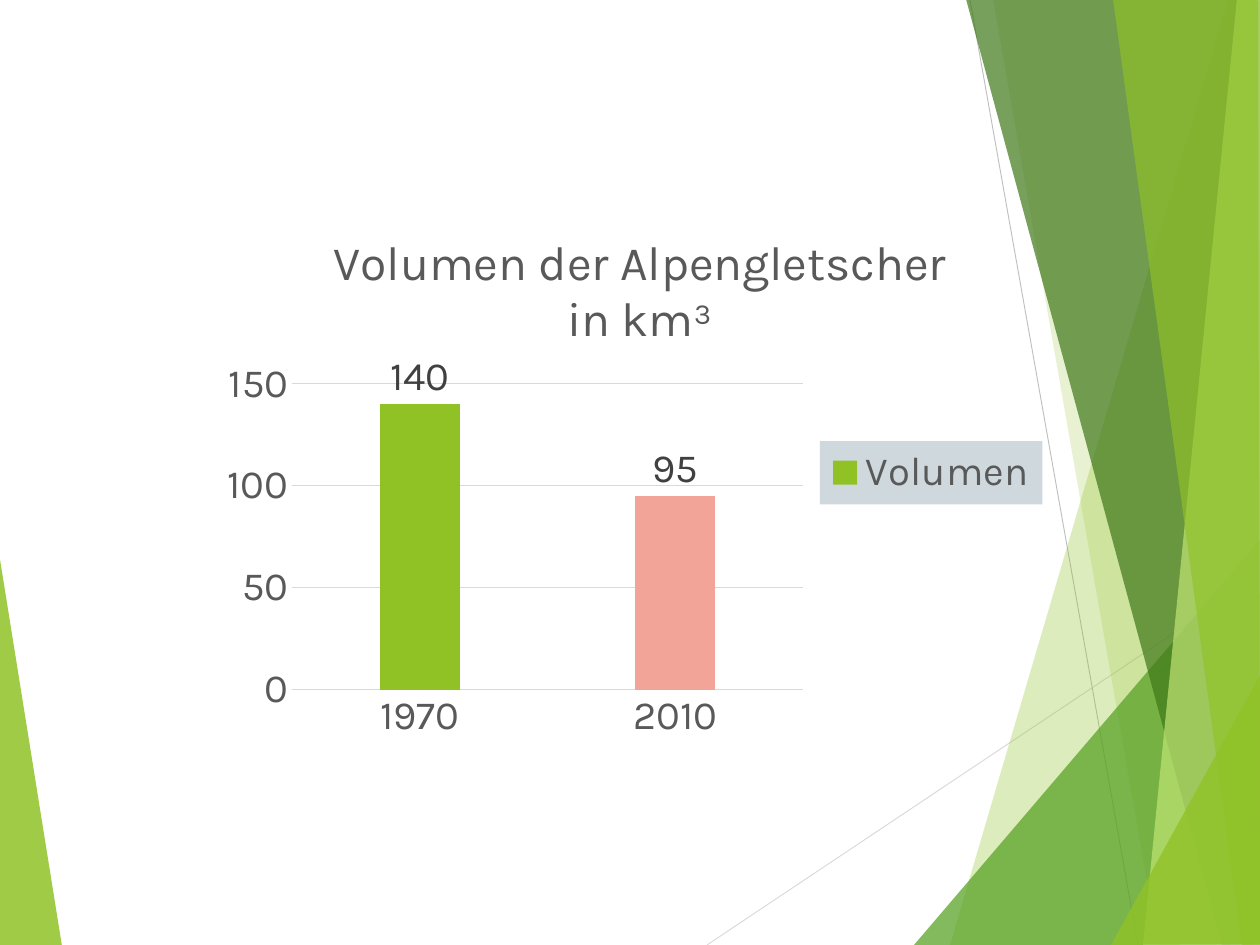
from dataclasses import dataclass

from lxml import etree
from pptx import Presentation
from pptx.chart.data import CategoryChartData
from pptx.dml.color import RGBColor
from pptx.enum.chart import XL_CHART_TYPE, XL_LABEL_POSITION, XL_LEGEND_POSITION, XL_TICK_MARK
from pptx.enum.shapes import MSO_CONNECTOR
from pptx.oxml import parse_xml
from pptx.oxml.ns import nsdecls, qn
from pptx.util import Pt

COLUMNS = XL_CHART_TYPE.COLUMN_CLUSTERED
OUTSIDE_END = XL_LABEL_POSITION.OUTSIDE_END
RIGHT = XL_LEGEND_POSITION.RIGHT
NO_TICK = XL_TICK_MARK.NONE
STRAIGHT = MSO_CONNECTOR.STRAIGHT
PX = 10160


@dataclass(frozen=True)
class Theme:
    font: str = "Karla"
    lime: str = "90C226"
    green: str = "54A021"
    forest: str = "3F7819"
    pale_lime: str = "C0E474"
    salmon: str = "F2A499"
    legend_fill: str = "CFD9DD"
    text: str = "595959"
    label: str = "404040"
    grid: str = "D9D9D9"
    long_ray: str = "BFBFBF"
    title_size: float = 38.4
    body_size: int = 32
    hairline: float = 0.75


THEME = Theme()
SLIDE = (1260, 945)

TITLE = "Volumen der Alpengletscher in km³"
YEARS = ["1970", "2010"]
SERIES = "Volumen"
VOLUMES = [140, 95]
CHART = (210, 193, 840, 560)
PLOT = (292, 384, 511, 306)
LEGEND = (820, 441, 223, 63)
TITLE_CORNER = (325, 222)

LEFT_FACET = [(THEME.lime, 85, [(-1, 553), (62, 946), (-1, 945)])]
RAYS = [
    (THEME.grid, (707, 945), (1261, 575)),
    (THEME.long_ray, (970, 0), (1138, 945)),
]
RIGHT_FACETS = [
    (THEME.lime, 30, [(1228, 0), (950, 945), (1262, 946), (1261, 1)]),
    (THEME.lime, 20, [(993, -1), (1158, 945), (1261, 945), (1261, -1)]),
    (THEME.green, 72, [(914, 945), (1260, 540), (1261, 945)]),
    (THEME.forest, 70, [(966, -1), (1222, 945), (1261, 944), (1261, -1)]),
    (THEME.pale_lime, 70, [(1237, -1), (1143, 945), (1261, 945), (1261, -1)]),
    (THEME.lime, 65, [(1113, -1), (1242, 945), (1260, 945), (1258, -1)]),
    (THEME.lime, 80, [(1111, 945), (1261, 674), (1262, 944)]),
]


def rgb(value):
    return RGBColor.from_string(value)


def style_font(font, size=THEME.body_size, color=THEME.text):
    font.name = THEME.font
    font.size = Pt(size)
    font.bold = False
    font.color.rgb = rgb(color)


def write_text(frame, text, **style):
    run = frame.paragraphs[0].add_run()
    run.text = text
    style_font(run.font, **style)


def style_line(line, color):
    line.color.rgb = rgb(color)
    line.width = Pt(THEME.hairline)


def add_facets(slide, facets):
    for color, opacity, points in facets:
        builder = slide.shapes.build_freeform(*points[0], scale=PX)
        builder.add_line_segments(points[1:], close=True)
        facet = builder.convert_to_shape()
        facet.shadow.inherit = False
        facet.line.fill.background()
        facet.fill.solid()
        facet.fill.fore_color.rgb = rgb(color)
        tint = facet.fill._xPr.find(qn("a:solidFill"))[0]
        etree.SubElement(tint, qn("a:alpha")).set("val", str(opacity * 1000))


def add_rays(slide):
    for color, start, end in RAYS:
        ray = slide.shapes.add_connector(STRAIGHT, *(v * PX for v in start + end))
        style_line(ray.line, color)
        etree.SubElement(ray._element.spPr, qn("a:effectLst"))


def place(element, box, inner=False):
    left, top, width, height = CHART
    shares = [(box[0] - left) / width, (box[1] - top) / height]
    shares += [v / whole for v, whole in zip(box[2:], (width, height))]
    marks = '<c:layoutTarget val="inner"/>' if inner else ""
    marks += '<c:xMode val="edge"/><c:yMode val="edge"/>'
    marks += "".join(f'<c:{k} val="{v:.3f}"/>' for k, v in zip("xywh", shares))
    for old in element.findall(qn("c:layout")):
        element.remove(old)
    layout = parse_xml(
        f'<c:layout {nsdecls("c")}><c:manualLayout>{marks}</c:manualLayout></c:layout>'
    )
    before = [child for child in element if child.tag in (qn("c:tx"), qn("c:legendPos"))]
    element.insert(len(before), layout)


def add_glacier_chart(slide):
    data = CategoryChartData()
    data.categories = YEARS
    data.add_series(SERIES, VOLUMES)
    chart = slide.shapes.add_chart(COLUMNS, *(v * PX for v in CHART), data).chart
    style_font(chart.font)

    chart.has_title = True
    write_text(chart.chart_title.text_frame, TITLE, size=THEME.title_size)
    chart.chart_title.include_in_layout = False
    place(chart.chart_title._element, TITLE_CORNER)

    plot = chart.plots[0]
    plot.vary_by_categories = False
    plot.gap_width = 219
    plot.overlap = -27
    place(chart._chartSpace.chart.plotArea, PLOT, inner=True)

    volume = plot.series[0]
    volume.invert_if_negative = False
    for fill, color in (
        (volume.format.fill, THEME.lime),
        (volume.points[1].format.fill, THEME.salmon),
    ):
        fill.solid()
        fill.fore_color.rgb = rgb(color)
    labels = volume.data_labels
    labels.show_value = True
    labels.position = OUTSIDE_END
    style_font(labels.font, color=THEME.label)

    for axis in (chart.category_axis, chart.value_axis):
        axis.major_tick_mark = NO_TICK
        axis.minor_tick_mark = NO_TICK
        style_font(axis.tick_labels.font)
    style_line(chart.category_axis.format.line, THEME.grid)
    scale = chart.value_axis
    scale.minimum_scale, scale.maximum_scale, scale.major_unit = 0, 150, 50
    scale.format.line.fill.background()
    style_line(scale.major_gridlines.format.line, THEME.grid)

    chart.has_legend = True
    legend = chart.legend
    legend.position = RIGHT
    legend.include_in_layout = False
    style_font(legend.font)
    place(legend._element, LEGEND)
    legend._element.find(qn("c:txPr")).addprevious(parse_xml(
        f'<c:spPr {nsdecls("c", "a")}><a:solidFill><a:srgbClr val="{THEME.legend_fill}"/>'
        "</a:solidFill><a:ln><a:noFill/></a:ln></c:spPr>"
    ))


def main():
    deck = Presentation()
    deck.slide_width, deck.slide_height = (v * PX for v in SLIDE)
    slide = deck.slides.add_slide(deck.slide_layouts[6])
    add_facets(slide, LEFT_FACET)
    add_rays(slide)
    add_facets(slide, RIGHT_FACETS)
    add_glacier_chart(slide)
    deck.save("out.pptx")


if __name__ == "__main__":
    main()
